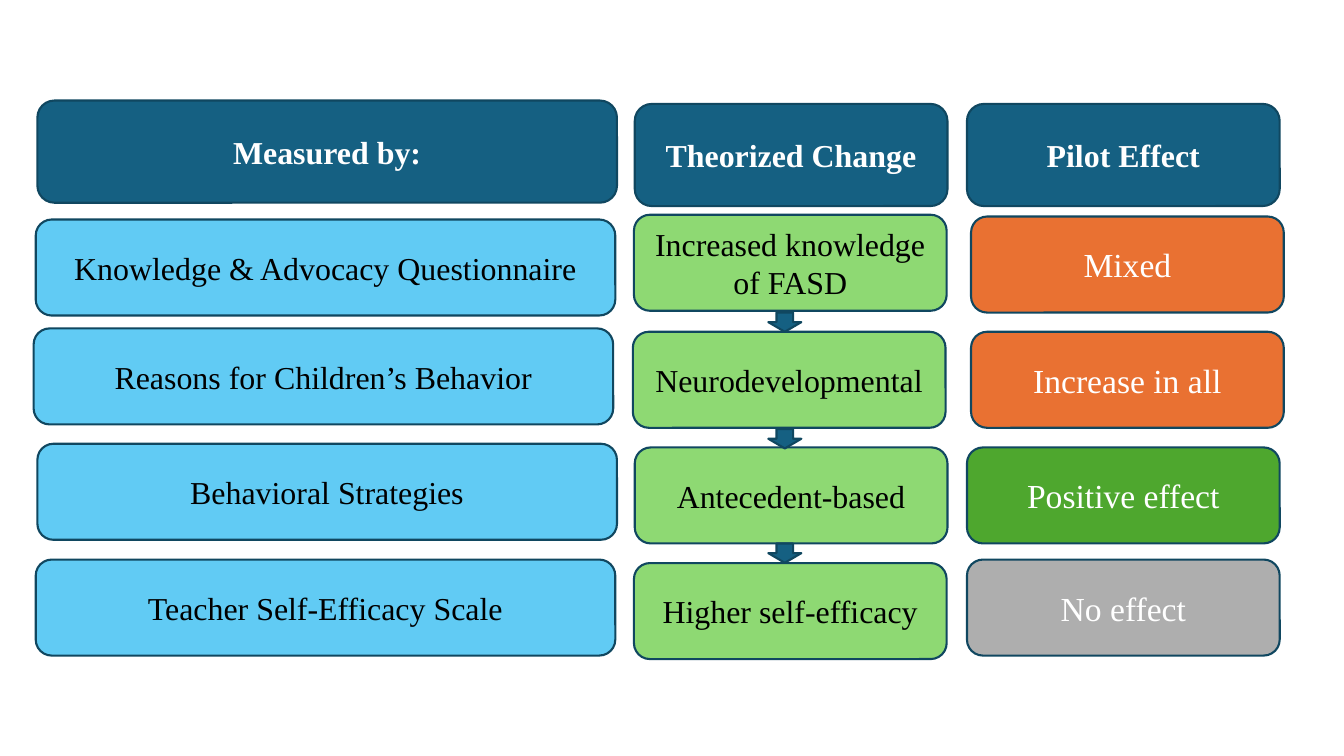
from dataclasses import dataclass

from pptx import Presentation
from pptx.dml.color import RGBColor
from pptx.enum.shapes import MSO_SHAPE
from pptx.enum.text import MSO_ANCHOR, PP_ALIGN
from pptx.shapes.autoshape import Shape
from pptx.slide import Slide
from pptx.util import Pt

NAVY = RGBColor(0x15, 0x60, 0x82)
OUTLINE = RGBColor(0x10, 0x47, 0x60)
SKY = RGBColor(0x61, 0xCB, 0xF4)
LIME = RGBColor(0x8E, 0xD9, 0x73)
ORANGE = RGBColor(0xE9, 0x71, 0x32)
GREEN = RGBColor(0x4E, 0xA7, 0x2E)
GREY = RGBColor(0xAE, 0xAE, 0xAE)
WHITE = RGBColor(0xFF, 0xFF, 0xFF)
BLACK = RGBColor(0x00, 0x00, 0x00)

HEADER_HEIGHT = 73
ENTRY_HEIGHT = 68.6
ARROW_LEFT, ARROW_WIDTH, ARROW_HEIGHT = 548.8, 23.6, 13.8
ARROW_TOPS = (223.2, 306.5, 388.2)


@dataclass(frozen=True)
class Box:
    text: str
    left: float
    top: float
    fill: RGBColor
    anchor: MSO_ANCHOR = MSO_ANCHOR.MIDDLE


@dataclass(frozen=True)
class Column:
    width: float
    text_color: RGBColor
    text_size: float
    header: Box
    entries: tuple[Box, ...]


COLUMNS = (
    Column(414, BLACK, 22.8, Box("Measured by:", 26.7, 71.8, NAVY), (
        Box("Knowledge & Advocacy Questionnaire", 25.5, 156.8, SKY),
        Box("Reasons for Children’s Behavior", 24, 234.6, SKY),
        Box("Behavioral Strategies", 26.7, 317, SKY),
        Box("Teacher Self-Efficacy Scale", 25.5, 399.7, SKY),
    )),
    Column(223.4, BLACK, 22.8, Box("Theorized Change", 453.4, 74.2, NAVY), (
        Box("Increased knowledge of FASD", 452.8, 153.4, LIME, MSO_ANCHOR.TOP),
        Box("Neurodevelopmental", 452, 237, LIME),
        Box("Antecedent-based", 453.4, 319.6, LIME),
        Box("Higher self-efficacy", 452.8, 402.2, LIME),
    )),
    Column(223.4, WHITE, 24, Box("Pilot Effect", 690.7, 74.2, NAVY), (
        Box("Mixed", 693.6, 154.7, ORANGE),
        Box("Increase in all", 693.6, 237, ORANGE),
        Box("Positive effect", 690.7, 319.6, GREEN),
        Box("No effect", 690.7, 399.7, GREY),
    )),
)


def add_outlined_shape(slide: Slide, kind: MSO_SHAPE, left: float, top: float,
                       width: float, height: float, fill: RGBColor) -> Shape:
    shape = slide.shapes.add_shape(kind, Pt(left), Pt(top), Pt(width), Pt(height))
    shape.shadow.inherit = False
    shape.fill.solid()
    shape.fill.fore_color.rgb = fill
    shape.line.color.rgb = OUTLINE
    shape.line.width = Pt(1.5)
    return shape


def add_box(slide: Slide, box: Box, width: float, height: float,
            size: float, color: RGBColor, bold: bool = False) -> None:
    shape = add_outlined_shape(slide, MSO_SHAPE.ROUNDED_RECTANGLE,
                               box.left, box.top, width, height, box.fill)
    frame = shape.text_frame
    frame.word_wrap = True
    frame.vertical_anchor = box.anchor
    paragraph = frame.paragraphs[0]
    paragraph.text = box.text
    paragraph.alignment = PP_ALIGN.CENTER
    paragraph.space_after = Pt(5.7)
    paragraph.font.name = "Times New Roman"
    paragraph.font.size = Pt(size)
    paragraph.font.bold = bold
    paragraph.font.color.rgb = color


def add_column(slide: Slide, column: Column) -> None:
    add_box(slide, column.header, column.width, HEADER_HEIGHT, 22.8, WHITE, bold=True)
    for entry in column.entries:
        add_box(slide, entry, column.width, ENTRY_HEIGHT,
                column.text_size, column.text_color)


def main() -> None:
    presentation = Presentation()
    presentation.slide_width = Pt(960)
    presentation.slide_height = Pt(540)
    slide = presentation.slides.add_slide(presentation.slide_layouts.get_by_name("Blank"))
    for column in COLUMNS:
        add_column(slide, column)
    for top in ARROW_TOPS:
        add_outlined_shape(slide, MSO_SHAPE.DOWN_ARROW, ARROW_LEFT, top,
                           ARROW_WIDTH, ARROW_HEIGHT, NAVY)
    presentation.save("out.pptx")


if __name__ == "__main__":
    main()
